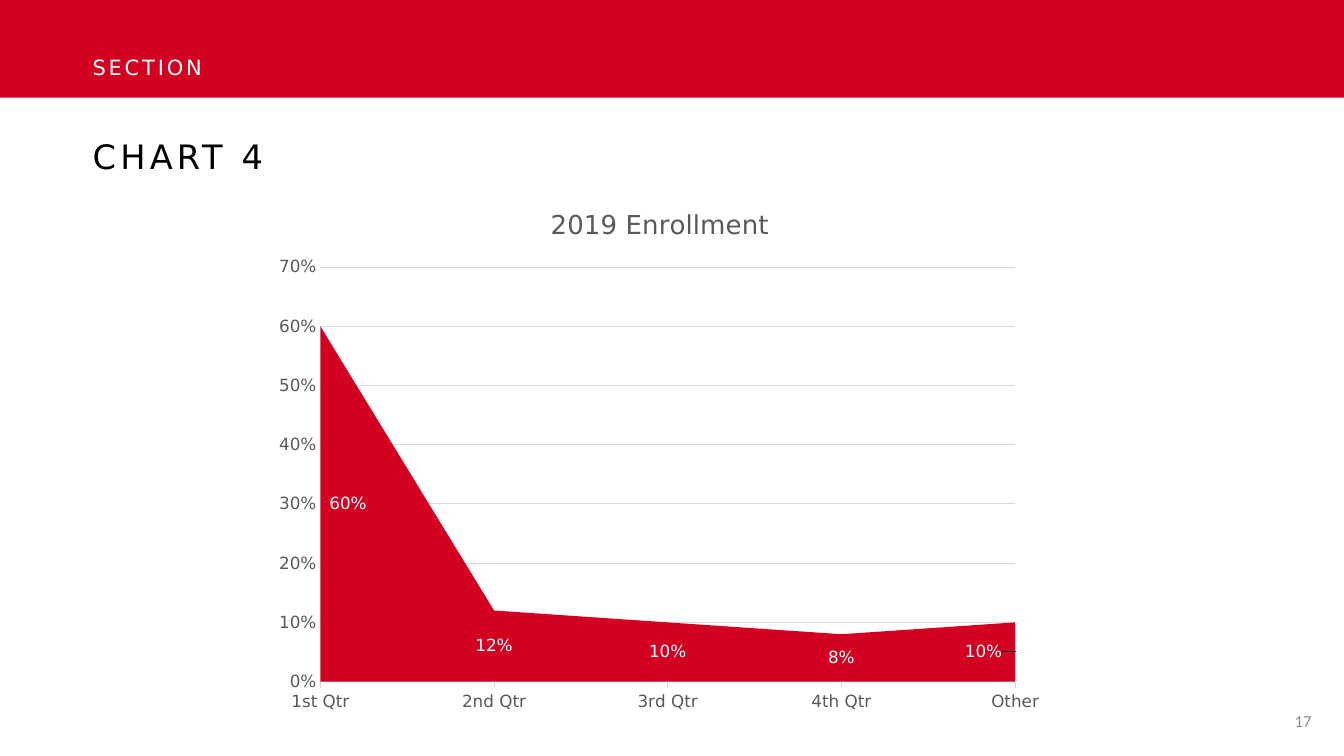
from lxml import etree
from pptx import Presentation
from pptx import util as u
from pptx.chart.data import CategoryChartData
from pptx.dml.color import RGBColor
from pptx.enum import chart as ch, shapes, text
from pptx.oxml.ns import qn

# Content
SECTION, HEADING, PAGE = "SECTION", "CHART 4", "17"
ENROLLMENT = "2019 Enrollment"
QUARTERS = {"1st Qtr": 0.6, "2nd Qtr": 0.12, "3rd Qtr": 0.1,
            "4th Qtr": 0.08, "Other": 0.1}
LABEL_SHIFT = {0: 0.035, 4: -0.04}  # edge labels, as shares of chart width

RED, WHITE, BLACK = "D40021", "FFFFFF", "000000"
DARK, GRID, PALE = "595959", "D9D9D9", "8C8C8C"
SANS = "DejaVu Sans"

# Left, top, width, height in percent of the slide
BAND = (0, 0, 100, 12.93)
SECTION_BOX = (6.15, 6.53, 37.13, 5.33)
HEADING_BOX = (6.15, 17.33, 42.61, 5.47)
PAGE_BOX = (75, 92.67, 23.33, 5.33)
CHART_BOX = (19.73, 24.67, 58.74, 71.2)
PLOT = {"x": 0.07, "y": 0.15, "w": 0.88, "h": 0.77}  # shares of the chart

deck = Presentation()
deck.slide_width, deck.slide_height = u.Inches(13.33), u.Inches(7.5)
slide = deck.slides.add_slide(deck.slide_layouts.get_by_name("Title Only"))


def place(box):
    sides = (deck.slide_width, deck.slide_height) * 2
    return [int(side * part / 100) for side, part in zip(sides, box)]


def color(hex_string):
    return RGBColor.from_string(hex_string)


def style(font, size, hex_string, face=SANS):
    font.size, font.name, font.bold = u.Pt(size), face, False
    font.color.rgb = color(hex_string)


def write(words, box, size, hex_string, face=SANS, spacing=0, holder=None,
          align=text.PP_ALIGN.LEFT, anchor=text.MSO_ANCHOR.TOP):
    if holder is None:
        holder = slide.shapes.add_textbox(*place(box))
    else:
        holder.left, holder.top, holder.width, holder.height = place(box)
    frame = holder.text_frame
    frame.word_wrap, frame.auto_size = True, text.MSO_AUTO_SIZE.NONE
    frame.vertical_anchor = anchor
    line = frame.paragraphs[0]
    line.alignment = align
    run = line.add_run()
    run.text = words
    style(run.font, size, hex_string, face)
    if spacing:
        run.font._element.set("spc", str(spacing * 100))


def manual_layout(**settings):
    layout = etree.Element(qn("c:layout"))
    manual = etree.SubElement(layout, qn("c:manualLayout"))
    for tag, value in settings.items():
        etree.SubElement(manual, qn("c:" + tag)).set("val", str(value))
    return layout


# Header band, heading and page number
band = slide.shapes.add_shape(shapes.MSO_SHAPE.RECTANGLE, *place(BAND))
band.shadow.inherit = False
band.fill.solid()
band.fill.fore_color.rgb = color(RED)
band.line.fill.background()
write(SECTION, SECTION_BOX, 15, WHITE, spacing=2)
write(HEADING, HEADING_BOX, 24, BLACK, spacing=3, holder=slide.shapes.title)
write(PAGE, PAGE_BOX, 12, PALE, face="Calibri",
      align=text.PP_ALIGN.RIGHT, anchor=text.MSO_ANCHOR.MIDDLE)

# Area chart
figures = CategoryChartData(number_format="0%")
figures.categories = QUARTERS.keys()
figures.add_series(ENROLLMENT, QUARTERS.values())
chart = slide.shapes.add_chart(ch.XL_CHART_TYPE.AREA, *place(CHART_BOX),
                               figures).chart
style(chart.font, 10, BLACK)
chart.has_legend = False
chart.has_title = True
chart_title = chart.chart_title.text_frame
chart_title.text = ENROLLMENT
style(chart_title.paragraphs[0].runs[0].font, 18.6, DARK)

plot_area = chart._chartSpace.chart.plotArea
for automatic in plot_area.findall(qn("c:layout")):
    plot_area.remove(automatic)
plot_area.insert(0, manual_layout(layoutTarget="inner", xMode="edge",
                                  yMode="edge", **PLOT))

# Axes
quarters, shares = chart.category_axis, chart.value_axis
for axis in (quarters, shares):
    style(axis.tick_labels.font, 12, DARK)
    axis.minor_tick_mark = ch.XL_TICK_MARK.NONE
quarters.has_major_gridlines = False
quarters.major_tick_mark = ch.XL_TICK_MARK.OUTSIDE
shares.major_tick_mark = ch.XL_TICK_MARK.NONE
shares.has_major_gridlines = True
for rule in (quarters.format.line, shares.major_gridlines.format.line):
    rule.color.rgb = color(GRID)
    rule.width = u.Pt(0.75)
shares.format.line.fill.background()
shares.minimum_scale, shares.maximum_scale, shares.major_unit = 0, 0.7, 0.1
shares.tick_labels.number_format = "0%"
shares.tick_labels.number_format_is_linked = False
shares._element.find(qn("c:crossBetween")).set("val", "midCat")

# Series and its labels
plot = chart.plots[0]
plot.vary_by_categories = False
area = plot.series[0]
area.format.fill.solid()
area.format.fill.fore_color.rgb = color(RED)
area.format.line.fill.background()
labels = area.data_labels
style(labels.font, 12, WHITE)
labels.show_value = True
labels.number_format, labels.number_format_is_linked = "0%", False
for index, shift in LABEL_SHIFT.items():
    style(area.points[index].data_label.font, 12, WHITE)
for label in labels._element.findall(qn("c:dLbl")):
    index = label.find(qn("c:idx"))
    number = etree.Element(qn("c:numFmt"), formatCode="0%", sourceLinked="0")
    index.addnext(number)
    index.addnext(manual_layout(x=LABEL_SHIFT[int(index.get("val"))], y=0))

deck.save("out.pptx")
